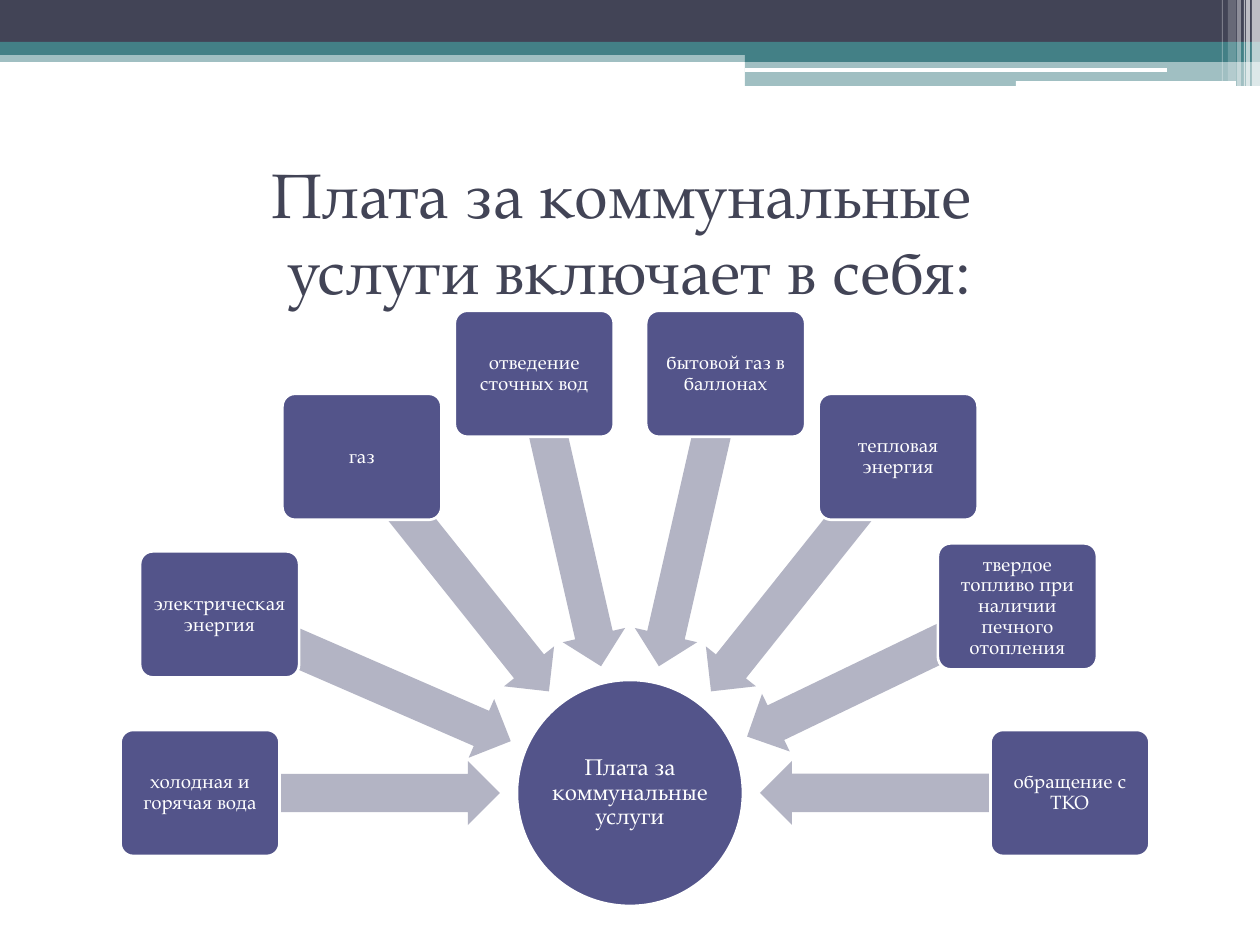
import math

import lxml.etree
import pptx
import pptx.dml.color
import pptx.enum.shapes
import pptx.enum.text
import pptx.oxml.ns
import pptx.util

SCALE = 914400 // 126  # EMU per px
SHAPE = pptx.enum.shapes.MSO_SHAPE

THEME = {
    "font": "TeX Gyre Pagella",
    "dark": "424456", "teal": "438086", "white": "FFFFFF",
    "node": "53548A", "arrow": "B3B4C4",
    "title_size": 36, "hub_size": 13, "node_size": 11, "outline": 1.5,
}

TITLE_LINES = ["Плата за коммунальные ", "услуги включает в себя:"]
HUB_TEXT = "Плата за коммунальные услуги"
# Clockwise from the left: label, shift from the even ring position in px
SERVICES = [
    ("холодная и горячая вода", (0, 0)),
    ("электрическая энергия", (-23, 8)),
    ("газ", (0, 0)),
    ("отведение сточных вод", (0, 0)),
    ("бытовой газ в баллонах", (0, 0)),
    ("тепловая энергия", (0, 0)),
    ("твердое топливо при наличии печного отопления", (0, 0)),
    ("обращение с ТКО", (10, 0)),
]

# Header bars: left, top, width, height in px, colour, opacity in percent
BARS = [
    (0, 50, 1260, 12, "teal", 50),
    (0, 0, 1260, 42, "dark", 100),
    (0, 42, 1260, 13, "teal", 100),
    (745, 49, 515, 13, "teal", 100),
    (745, 61, 515, 25, "teal", 50),
    (745, 68, 422, 4, "white", 100),
    (1016, 81, 220, 5, "white", 100),
]
# Header stripes: left, width, height in px, opacity in percent
STRIPES = [(1252, 8, 86, 65), (1246, 4, 86, 65), (1244, 1, 86, 60),
           (1237, 4, 86, 40), (1228, 8, 81, 20), (1222, 1, 81, 30)]

TITLE_BOX = (63, 158, 1134, 147)
HUB_CENTRE, HUB_SIZE = (630, 793), 226
RING_RADIUS, TIP_RADIUS = 430, 130
NODE_WIDTH, NODE_HEIGHT, ARROW_HEIGHT = 159, 126, 64


def px(value):
    return pptx.util.Emu(round(value * SCALE))


def colour(name):
    return pptx.dml.color.RGBColor.from_string(THEME[name])


def add_filled(shapes, kind, left, top, width, height, fill, opacity=100):
    shape = shapes.add_shape(kind, px(left), px(top), px(width), px(height))
    shape.shadow.inherit = False
    shape.fill.solid()
    shape.fill.fore_color.rgb = colour(fill)
    shape.line.fill.background()
    if opacity < 100:
        tint = shape.fill._xPr.find(".//" + pptx.oxml.ns.qn("a:srgbClr"))
        lxml.etree.SubElement(tint, pptx.oxml.ns.qn("a:alpha"), val=str(opacity * 1000))
    return shape


def add_centred(shapes, kind, centre, width, height, fill):
    return add_filled(shapes, kind, centre[0] - width / 2, centre[1] - height / 2,
                      width, height, fill)


def write(frame, lines, size, font_colour):
    """Fill a frame with one centred paragraph, broken between the lines."""
    frame.word_wrap = True
    frame.auto_size = pptx.enum.text.MSO_AUTO_SIZE.NONE
    frame.vertical_anchor = pptx.enum.text.MSO_ANCHOR.MIDDLE
    para = frame.paragraphs[0]
    para.alignment = pptx.enum.text.PP_ALIGN.CENTER
    for index, line in enumerate(lines):
        if index:
            para.add_line_break()
        span = para.add_run()
        span.text = line
        span.font.name = THEME["font"]
        span.font.size = pptx.util.Pt(THEME[size])
        span.font.color.rgb = colour(font_colour)
    return para


def label(shape, text, size, inset):
    shape.line.color.rgb = colour("white")
    shape.line.width = pptx.util.Pt(THEME["outline"])
    frame = shape.text_frame
    frame.margin_left = frame.margin_right = px(inset)
    frame.margin_top = frame.margin_bottom = px(inset)
    write(frame, [text], size, "white").line_spacing = 0.9


def add_header(page):
    for *place, fill, opacity in BARS:
        add_filled(page.shapes, SHAPE.RECTANGLE, *place, fill, opacity)
    for left, width, height, opacity in STRIPES:
        add_filled(page.shapes, SHAPE.RECTANGLE, left, 0, width, height, "white", opacity)


def add_title(page):
    title = page.shapes.title
    title.left, title.top, title.width, title.height = map(px, TITLE_BOX)
    write(title.text_frame, TITLE_LINES, "title_size", "dark")


def add_arrow(shapes, start):
    """Point from a node centre towards the hub, stopping short of it."""
    run, rise = HUB_CENTRE[0] - start[0], HUB_CENTRE[1] - start[1]
    distance = math.hypot(run, rise)
    length = distance - TIP_RADIUS
    share = length / distance / 2
    middle = (start[0] + run * share, start[1] + rise * share)
    arrow = add_centred(shapes, SHAPE.LEFT_ARROW, middle, length, ARROW_HEIGHT, "arrow")
    arrow.adjustments[0], arrow.adjustments[1] = 0.6, 0.5
    arrow.rotation = (math.degrees(math.atan2(rise, run)) + 180) % 360


def add_diagram(page):
    shapes = page.shapes.add_group_shape().shapes
    hub = add_centred(shapes, SHAPE.OVAL, HUB_CENTRE, HUB_SIZE, HUB_SIZE, "node")
    label(hub, HUB_TEXT, "hub_size", 2)
    step = math.pi / (len(SERVICES) - 1)
    for index, (text, shift) in enumerate(SERVICES):
        centre = (HUB_CENTRE[0] - RING_RADIUS * math.cos(index * step) + shift[0],
                  HUB_CENTRE[1] - RING_RADIUS * math.sin(index * step) + shift[1])
        add_arrow(shapes, centre)
        node = add_centred(shapes, SHAPE.ROUNDED_RECTANGLE, centre,
                           NODE_WIDTH, NODE_HEIGHT, "node")
        node.adjustments[0] = 0.1
        label(node, text, "node_size", 3)


def main():
    deck = pptx.Presentation()
    deck.slide_width, deck.slide_height = px(1260), px(945)
    page = deck.slides.add_slide(deck.slide_layouts[5])
    add_header(page)
    add_title(page)
    add_diagram(page)
    deck.save("out.pptx")


if __name__ == "__main__":
    main()
